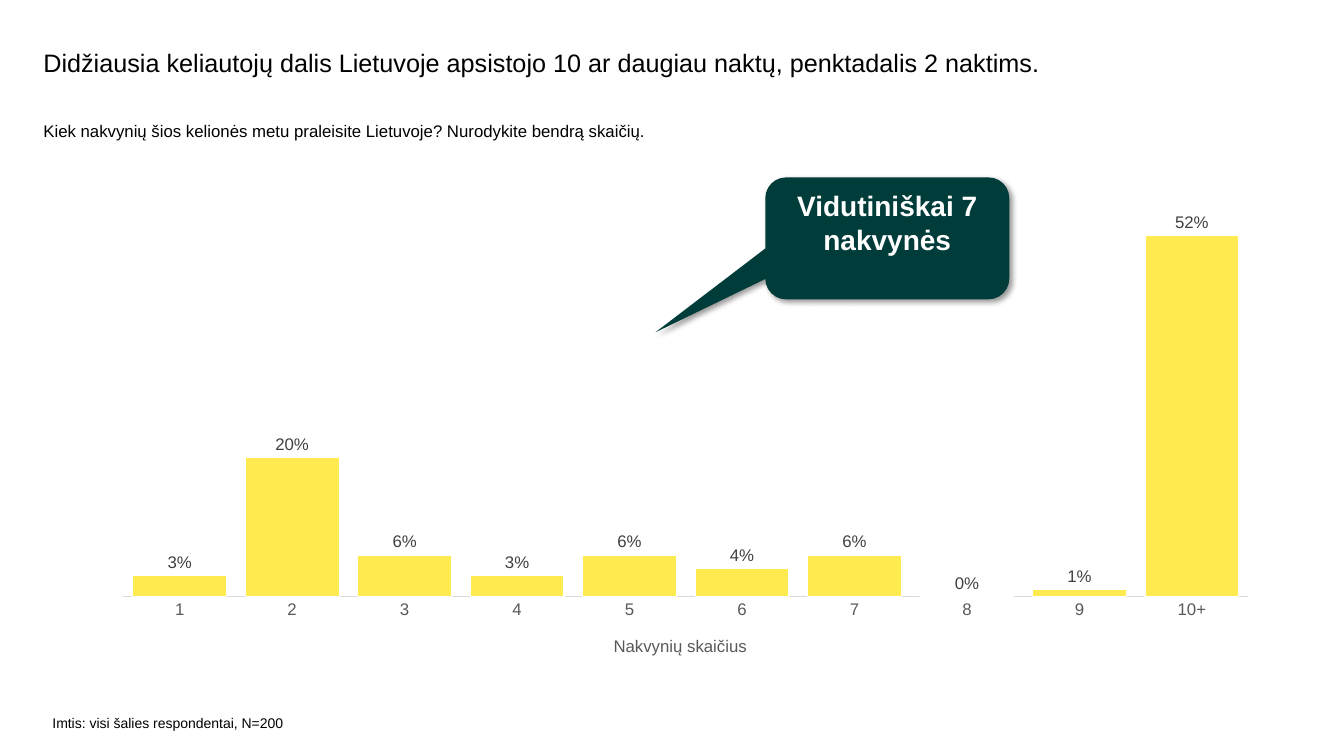
from typing import NamedTuple

from lxml import etree
from pptx import Presentation
from pptx.chart.data import CategoryChartData
from pptx.dml.color import RGBColor
from pptx.enum.chart import XL_CHART_TYPE, XL_LABEL_POSITION, XL_TICK_MARK
from pptx.enum.shapes import MSO_SHAPE
from pptx.enum.text import MSO_ANCHOR, PP_ALIGN
from pptx.oxml import parse_xml
from pptx.oxml.ns import nsdecls, qn
from pptx.util import Inches, Pt

COLUMN_CLUSTERED = XL_CHART_TYPE.COLUMN_CLUSTERED
OUTSIDE_END = XL_LABEL_POSITION.OUTSIDE_END
NO_TICK = XL_TICK_MARK.NONE
CALLOUT = MSO_SHAPE.ROUNDED_RECTANGULAR_CALLOUT
TOP = MSO_ANCHOR.TOP
CENTER = PP_ALIGN.CENTER

FONT = "Arial"
BLACK = RGBColor(0x00, 0x00, 0x00)
WHITE = RGBColor(0xFF, 0xFF, 0xFF)
YELLOW = RGBColor(0xFF, 0xEB, 0x50)
DARK_GREEN = RGBColor(0x00, 0x3C, 0x3A)
AXIS_LINE = RGBColor(0xD9, 0xD9, 0xD9)
AXIS_TEXT = RGBColor(0x59, 0x59, 0x59)
LABEL_TEXT = RGBColor(0x40, 0x40, 0x40)

NIGHTS = ["1", "2", "3", "4", "5", "6", "7", "8", "9", "10+"]
SHARES = [0.03, 0.2, 0.06, 0.03, 0.06, 0.04, 0.06, 0, 0.01, 0.52]


class TextLine(NamedTuple):
    left: float
    top: float
    width: float
    height: float
    size: int
    text: str
    spacing: float = 1.0


TEXT_LINES = [
    TextLine(0.43, 0.5, 11.25, 0.6, 18,
             "Didžiausia keliautojų dalis Lietuvoje apsistojo 10 ar daugiau naktų, "
             "penktadalis 2 naktims.", 0.9),
    TextLine(0.43, 1.2, 11.89, 0.61, 12,
             "Kiek nakvynių šios kelionės metu praleisite Lietuvoje? "
             "Nurodykite bendrą skaičių."),
    TextLine(0.52, 7.09, 2.53, 0.24, 10, "Imtis: visi šalies respondentai, N=200"),
]


def style_font(font, size: int, color: RGBColor, bold: bool = False) -> None:
    font.name = FONT
    font.size = Pt(size)
    font.bold = bold
    font.color.rgb = color


def add_text_line(page, line: TextLine) -> None:
    box = page.shapes.add_textbox(Inches(line.left), Inches(line.top),
                                  Inches(line.width), Inches(line.height))
    frame = box.text_frame
    frame.word_wrap = True
    frame.vertical_anchor = TOP
    frame.margin_left = frame.margin_top = frame.margin_right = frame.margin_bottom = 0
    frame.text = line.text
    para = frame.paragraphs[0]
    para.line_spacing = line.spacing
    style_font(para.runs[0].font, line.size, BLACK)


def set_layout(parent, index: int, settings: dict[str, str | float]) -> None:
    for old_layout in parent.findall(qn("c:layout")):
        parent.remove(old_layout)
    layout = parse_xml(f"<c:layout {nsdecls('c')}><c:manualLayout/></c:layout>")
    for name, value in settings.items():
        etree.SubElement(layout[0], qn(f"c:{name}")).set("val", str(value))
    parent.insert(index, layout)


def add_nights_chart(page) -> None:
    data = CategoryChartData(number_format="0%")
    data.categories = NIGHTS
    data.add_series("Series 1", SHARES)
    chart = page.shapes.add_chart(COLUMN_CLUSTERED, Inches(1.11), Inches(1.79),
                                  Inches(11.5), Inches(5.1), data).chart
    chart.has_legend = False
    chart.has_title = False
    style_font(chart.font, 10, BLACK)

    plot = chart.plots[0]
    plot.gap_width = 20
    plot.overlap = -27
    plot.vary_by_categories = False
    series = plot.series[0]
    series.invert_if_negative = False
    series.format.fill.solid()
    series.format.fill.fore_color.rgb = YELLOW
    series.format.line.color.rgb = WHITE
    series.format.line.width = Pt(0.75)
    labels = series.data_labels
    labels.show_value = True
    labels.number_format = "0%"
    labels.number_format_is_linked = False
    labels.position = OUTSIDE_END
    style_font(labels.font, 12, LABEL_TEXT)

    value_axis = chart.value_axis
    value_axis.minimum_scale = 0
    value_axis.maximum_scale = 0.6
    value_axis.has_major_gridlines = False
    value_axis.visible = False

    category_axis = chart.category_axis
    category_axis.major_tick_mark = category_axis.minor_tick_mark = NO_TICK
    category_axis.format.line.color.rgb = AXIS_LINE
    category_axis.format.line.width = Pt(0.75)
    style_font(category_axis.tick_labels.font, 12, AXIS_TEXT)
    title = category_axis.axis_title
    title.text_frame.text = "Nakvynių skaičius"
    style_font(title.text_frame.paragraphs[0].runs[0].font, 12, AXIS_TEXT)

    set_layout(title._element, 1,
               {"xMode": "edge", "yMode": "edge", "x": 0.43, "y": 0.88})
    set_layout(chart._chartSpace.chart.plotArea, 0,
               {"layoutTarget": "inner", "xMode": "edge", "yMode": "edge",
                "x": 0.01, "y": 0, "w": 0.97, "h": 0.81})


def add_shadow(shape) -> None:
    shape.shadow.inherit = False
    effects = shape._element.spPr.find(qn("a:effectLst"))
    effects.append(parse_xml(
        f'<a:outerShdw {nsdecls("a")} blurRad="{Pt(4)}" dist="{Pt(3)}" '
        f'dir="{45 * 60000}" algn="tl" rotWithShape="0">'
        '<a:srgbClr val="000000"><a:alpha val="40000"/></a:srgbClr></a:outerShdw>'))


def add_average_callout(page) -> None:
    callout = page.shapes.add_shape(CALLOUT, Inches(7.59), Inches(1.76),
                                    Inches(2.42), Inches(1.21))
    for index, value in enumerate((-0.95, 0.77, 0.17)):
        callout.adjustments[index] = value
    callout.fill.solid()
    callout.fill.fore_color.rgb = DARK_GREEN
    callout.line.fill.background()
    add_shadow(callout)
    frame = callout.text_frame
    frame.word_wrap = True
    frame.vertical_anchor = TOP
    frame.text = "Vidutiniškai 7 nakvynės"
    para = frame.paragraphs[0]
    para.alignment = CENTER
    style_font(para.runs[0].font, 20, WHITE, bold=True)


def main() -> None:
    deck = Presentation()
    deck.slide_width = Inches(13.33)
    deck.slide_height = Inches(7.5)
    page = deck.slides.add_slide(deck.slide_layouts[6])
    for line in TEXT_LINES:
        add_text_line(page, line)
    add_nights_chart(page)
    add_average_callout(page)
    deck.save("out.pptx")


if __name__ == "__main__":
    main()
